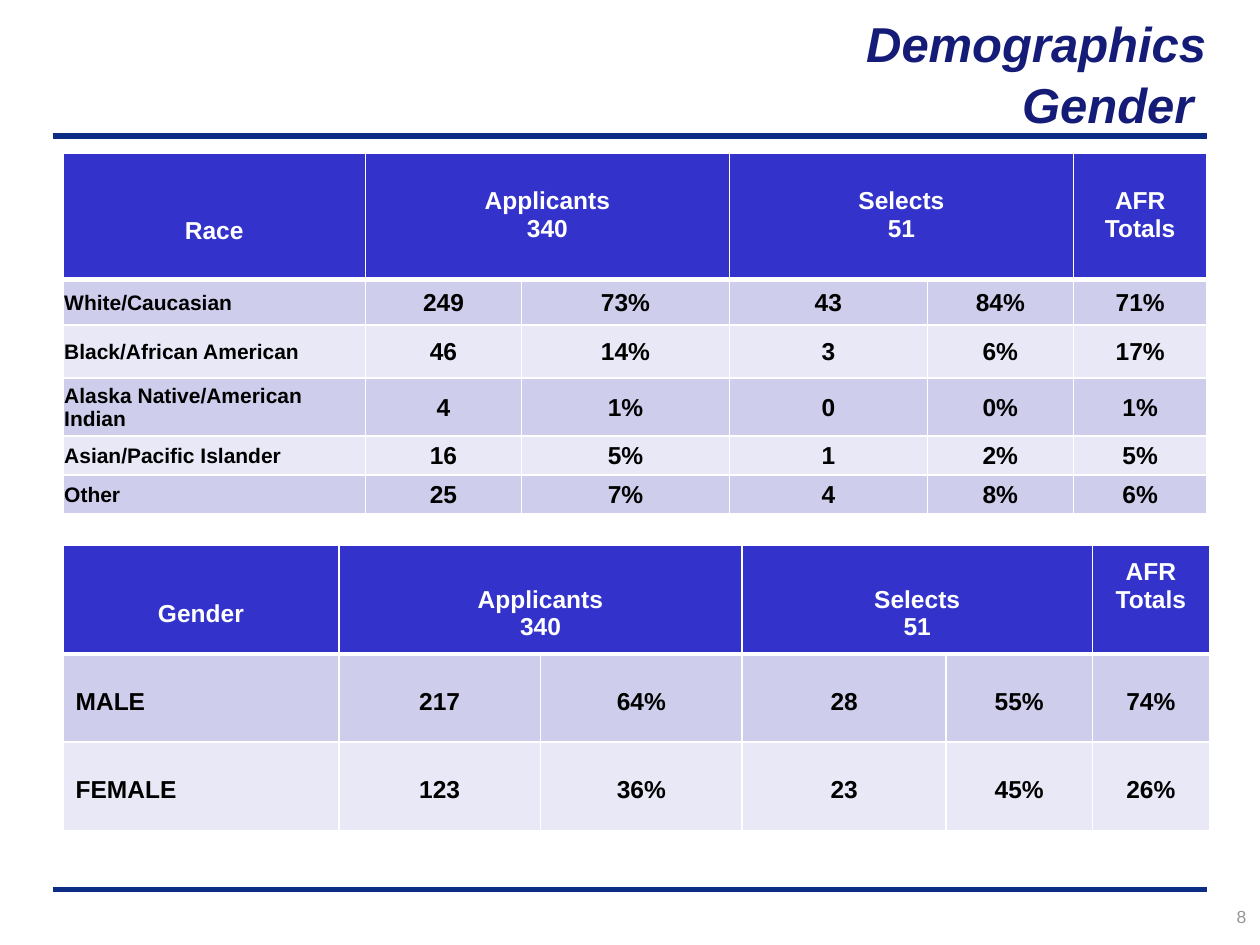
from dataclasses import dataclass

from lxml.etree import SubElement
from pptx import Presentation
from pptx.dml.color import RGBColor
from pptx.enum.shapes import MSO_CONNECTOR
from pptx.enum.text import MSO_ANCHOR, PP_ALIGN
from pptx.oxml.ns import qn
from pptx.util import Inches, Pt


@dataclass(frozen=True)
class Theme:
    """Colours, type sizes and line widths of the slide."""
    font: str = "Arial"
    rule: str = "0C2D83"
    title: str = "151C77"
    number: str = "969696"
    header: str = "3333CC"
    bands: tuple = ("CECEEC", "E8E8F6")
    light: str = "FFFFFF"
    dark: str = "000000"
    title_size: int = 28
    value_size: int = 14
    label_size: int = 12
    number_size: int = 10
    thick: int = 3
    thin: int = 1


@dataclass(frozen=True)
class Padding:
    """Left, top, right and bottom cell margins in grid units, with the anchor."""
    margins: tuple
    anchor: MSO_ANCHOR = MSO_ANCHOR.MIDDLE


class SlideBuilder:
    """Places styled elements on a grid of 100 columns by 75 rows."""

    def __init__(self, deck, theme):
        """Adds a blank slide to the deck."""
        self.theme = theme
        self.unit = deck.slide_width // 100
        self.slide = deck.slides.add_slide(deck.slide_layouts[6])

    def grid(self, *lengths):
        """Turns grid units into slide lengths."""
        return [round(length * self.unit) for length in lengths]

    def add_lines(self, frame, lines, size, color, align, bold=True, italic=False):
        """Adds one paragraph with one run for each line."""
        for index, line in enumerate(lines):
            paragraph = frame.paragraphs[0] if index == 0 else frame.add_paragraph()
            paragraph.alignment = align
            run = paragraph.add_run()
            run.text = line
            font = run.font
            font.name, font.size = self.theme.font, Pt(size)
            font.bold, font.italic = bold, italic
            font.color.rgb = RGBColor.from_string(color)

    def text(self, box, margins, lines, size, color, **style):
        """Adds a right-aligned text box and returns its frame."""
        frame = self.slide.shapes.add_textbox(*self.grid(*box)).text_frame
        frame.word_wrap = True
        (frame.margin_left, frame.margin_top,
         frame.margin_right, frame.margin_bottom) = self.grid(*margins)
        self.add_lines(frame, lines, size, color, PP_ALIGN.RIGHT, **style)
        return frame

    def rule(self, left, right, row):
        """Adds a horizontal rule across the slide."""
        line = self.slide.shapes.add_connector(
            MSO_CONNECTOR.STRAIGHT, *self.grid(left, row, right, row))
        line.line.color.rgb = RGBColor.from_string(self.theme.rule)
        line.line.width = Pt(self.theme.thick)
        SubElement(line._element.spPr, qn("a:effectLst"))

    def border(self, cell, row):
        """Draws cell borders, thick between the header and the body."""
        theme = self.theme
        widths = {"L": theme.thin, "R": theme.thin,
                  "T": theme.thick if row == 1 else theme.thin,
                  "B": theme.thick if row == 0 else theme.thin}
        properties = cell._tc.get_or_add_tcPr()
        for side, width in widths.items():
            edge = SubElement(properties, qn(f"a:ln{side}"), w=str(Pt(width)))
            fill = SubElement(edge, qn("a:solidFill"))
            SubElement(fill, qn("a:srgbClr"), val=theme.light)

    def cell(self, cell, row, color, padding):
        """Sets the borders, fill, margins and anchor of a cell."""
        self.border(cell, row)
        cell.fill.solid()
        cell.fill.fore_color.rgb = RGBColor.from_string(color)
        (cell.margin_left, cell.margin_top,
         cell.margin_right, cell.margin_bottom) = self.grid(*padding.margins)
        cell.vertical_anchor = padding.anchor

    def table(self, left, top, widths, heights, headers, header_paddings,
              records, body_padding, label_size):
        """Adds a table whose header pairs the count and share columns."""
        theme = self.theme
        table = self.slide.shapes.add_table(
            len(heights), len(widths),
            *self.grid(left, top, sum(widths), sum(heights))).table
        table.horz_banding = False
        for column, width in zip(table.columns, self.grid(*widths)):
            column.width = width
        for line, height in zip(table.rows, self.grid(*heights)):
            line.height = height
        starts = (0, 1, 3, 5)
        for start, lines, padding in zip(starts, headers, header_paddings):
            span = 2 if start in (1, 3) else 1
            for column in range(start, start + span):
                self.cell(table.cell(0, column), 0, theme.header, padding)
            if span == 2:
                table.cell(0, start).merge(table.cell(0, start + 1))
            self.add_lines(table.cell(0, start).text_frame, lines,
                           theme.value_size, theme.light, PP_ALIGN.CENTER)
        for row, record in enumerate(records, 1):
            for column, value in enumerate(record):
                cell = table.cell(row, column)
                self.cell(cell, row, theme.bands[(row - 1) % 2], body_padding)
                size, align = ((theme.value_size, PP_ALIGN.CENTER) if column
                               else (label_size, PP_ALIGN.LEFT))
                self.add_lines(cell.text_frame, [value], size, theme.dark, align)


def main():
    """Builds the demographics slide."""
    deck = Presentation()
    deck.slide_width, deck.slide_height = Inches(10), Inches(7.5)
    theme = Theme()
    page = SlideBuilder(deck, theme)
    for row in (70.6, 10.8):
        page.rule(4.2, 95.8, row)

    title = page.text((17.5, 0, 79.2, 9.2), (1, 0.8, 1, 0),
                      ["Demographics", "Gender"], theme.title_size,
                      theme.title, italic=True)
    for paragraph in title.paragraphs:
        paragraph.line_spacing = 1.05
    title.paragraphs[1]._p.get_or_add_pPr().set("marR", str(page.unit))
    page.text((87.4, 71.4, 12.5, 3.3), (1, 0.5, 1, 0.5), ["8"],
              theme.number_size, theme.number, bold=False)

    lowered = (1, 2.7, 1, 0.5)
    middle = Padding(lowered)
    upper = Padding(lowered, MSO_ANCHOR.TOP)
    raised = Padding((1, 0.5, 1, 2.7))
    tight = Padding((0.1, 0.1, 0.1, 0))
    groups = [["Applicants", "340"], ["Selects", "51"], ["AFR Totals"]]

    page.table(
        5, 12.2, (24, 12.4, 16.5, 15.7, 11.6, 10.6),
        (10, 3.6, 4.2, 4.6, 3.1, 3.1),
        [["Race"], *groups], (middle, upper, upper, upper),
        [("White/Caucasian", "249", "73%", "43", "84%", "71%"),
         ("Black/African American", "46", "14%", "3", "6%", "17%"),
         ("Alaska Native/American Indian", "4", "1%", "0", "0%", "1%"),
         ("Asian/Pacific Islander", "16", "5%", "1", "2%", "5%"),
         ("Other", "25", "7%", "4", "8%", "6%")],
        tight, theme.label_size)
    page.table(
        5, 43.3, (21.9, 16, 16, 16.2, 11.6, 9.3), (8.6, 7, 7),
        [["Gender"], *groups], (middle, middle, middle, raised),
        [("MALE", "217", "64%", "28", "55%", "74%"),
         ("FEMALE", "123", "36%", "23", "45%", "26%")],
        upper, theme.value_size)
    deck.save("out.pptx")


if __name__ == "__main__":
    main()
